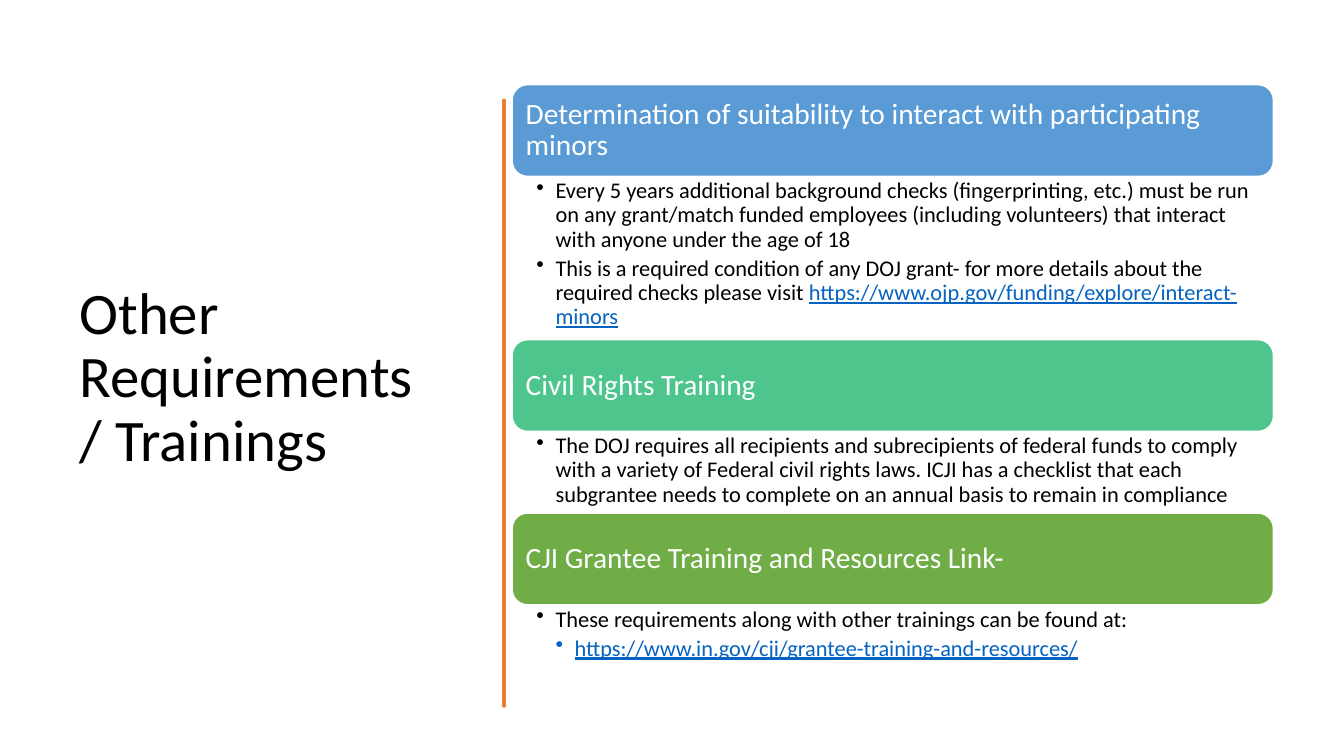
from lxml.etree import SubElement
from pptx import Presentation
from pptx.dml.color import RGBColor
from pptx.enum.shapes import MSO_SHAPE
from pptx.enum.text import MSO_ANCHOR, PP_ALIGN
from pptx.oxml.ns import qn
from pptx.util import Inches, Pt

LEFT, TOP, WIDTH = 5.08, 0.84, 7.55
BAR_HEIGHT = 0.91
INDENT = 0.19
ORANGE, LINK_BLUE = "ED7D31", "0563C1"

# Heading, bar colour, height of the details, and (level, text, link) bullets
SECTIONS = [
    ("Determination of suitability to interact with participating minors", "5B9BD5", 1.62, [
        (1, "Every 5 years additional background checks (fingerprinting, etc.) must be run on any "
            "grant/match funded employees (including volunteers) that interact with anyone under "
            "the age of 18", ""),
        (1, "This is a required condition of any DOJ grant- for more details about the required "
            "checks please visit ", "https://www.ojp.gov/funding/explore/interact-minors"),
    ]),
    ("Civil Rights Training", "4DC58D", 0.81, [
        (1, "The DOJ requires all recipients and subrecipients of federal funds to comply with a "
            "variety of Federal civil rights laws. ICJI has a checklist that each subgrantee needs "
            "to complete on an annual basis to remain in compliance", ""),
    ]),
    ("CJI Grantee Training and Resources Link-", "70AD47", 0.61, [
        (1, "These requirements along with other trainings can be found at:", ""),
        (2, "", "https://www.in.gov/cji/grantee-training-and-resources/"),
    ]),
]

# Edges of the hand-drawn divider, as (x, y) from top to bottom
RIGHT_EDGE = [(4.75, 0.84), (4.76, 1.15), (4.75, 1.5), (4.74, 1.8), (4.75, 2.26), (4.75, 2.94),
              (4.76, 3.3), (4.75, 3.6), (4.77, 4.05), (4.75, 4.36), (4.74, 4.7), (4.75, 5.1),
              (4.77, 5.45), (4.75, 5.84), (4.75, 6.3), (4.75, 6.76)]
LEFT_EDGE = [(4.73, 0.84), (4.74, 1.2), (4.72, 1.7), (4.73, 2.4), (4.72, 2.7), (4.73, 3.35),
             (4.72, 3.6), (4.73, 3.9), (4.72, 4.35), (4.74, 4.6), (4.74, 4.9), (4.73, 5.2),
             (4.73, 5.6), (4.73, 6.13), (4.72, 6.45), (4.73, 6.76)]


def color(hex_code):
    return RGBColor.from_string(hex_code)


def format_text(text_frame, size, hex_code, margins, anchor):
    text_frame.word_wrap = True
    text_frame.vertical_anchor = anchor
    text_frame.margin_left, text_frame.margin_top, text_frame.margin_right, \
        text_frame.margin_bottom = [Inches(margin) for margin in margins]
    for paragraph in text_frame.paragraphs:
        paragraph.alignment = PP_ALIGN.LEFT
        paragraph.line_spacing = 0.9
        for run in paragraph.runs:
            run.font.name = "Calibri"
            run.font.size = Pt(size)
            run.font.color.rgb = color(hex_code)


presentation = Presentation()
presentation.slide_width, presentation.slide_height = Inches(13.33), Inches(7.5)
slide = presentation.slides.add_slide(presentation.slide_layouts[6])

title = slide.shapes.add_textbox(Inches(0.69), Inches(0.7), Inches(3.74), Inches(6.11))
title.text_frame.text = "Other Requirements / Trainings"
format_text(title.text_frame, 42, "000000", (0.1, 0.05, 0.1, 0.05), MSO_ANCHOR.MIDDLE)

outline = RIGHT_EDGE + LEFT_EDGE[::-1]
builder = slide.shapes.build_freeform(*outline[0], scale=Inches(1))
builder.add_line_segments(outline[1:], close=True)
divider = builder.convert_to_shape()
divider.shadow.inherit = False
divider.fill.solid()
divider.fill.fore_color.rgb = color(ORANGE)
divider.line.color.rgb = color(ORANGE)
divider.line.width = Pt(3.25)
SubElement(divider.line._get_or_add_ln(), qn("a:round"))

top = TOP
for heading, bar_color, details_height, bullets in SECTIONS:
    bar = slide.shapes.add_shape(MSO_SHAPE.ROUNDED_RECTANGLE, Inches(LEFT), Inches(top),
                                 Inches(WIDTH), Inches(BAR_HEIGHT))
    bar.shadow.inherit = False
    bar.fill.solid()
    bar.fill.fore_color.rgb = color(bar_color)
    bar.line.color.rgb = color("FFFFFF")
    bar.line.width = Pt(1)
    bar.text_frame.text = heading
    format_text(bar.text_frame, 21, "FFFFFF", (0.09, 0.09, 0.09, 0.09), MSO_ANCHOR.MIDDLE)
    top += BAR_HEIGHT

    details = slide.shapes.add_textbox(Inches(LEFT), Inches(top), Inches(WIDTH),
                                       Inches(details_height))
    text_frame = details.text_frame
    links = []
    for index, (level, text, link) in enumerate(bullets):
        paragraph = text_frame.add_paragraph() if index else text_frame.paragraphs[0]
        paragraph.level = level
        paragraph.space_after = Pt(3.5)
        if text:
            paragraph.add_run().text = text
        if link:
            links.append(paragraph.add_run())
            links[-1].text = link
        properties = paragraph._p.get_or_add_pPr()
        properties.set("marL", str(Inches(INDENT * level)))
        properties.set("indent", str(Inches(-INDENT)))
        SubElement(properties, qn("a:buChar"), char="•")
    format_text(text_frame, 16, "000000", (0.24, 0.03, 0.16, 0.03), MSO_ANCHOR.TOP)
    for run in links:
        run.font.color.rgb = color(LINK_BLUE)
        run.font.underline = True
    top += details_height

presentation.save("out.pptx")
